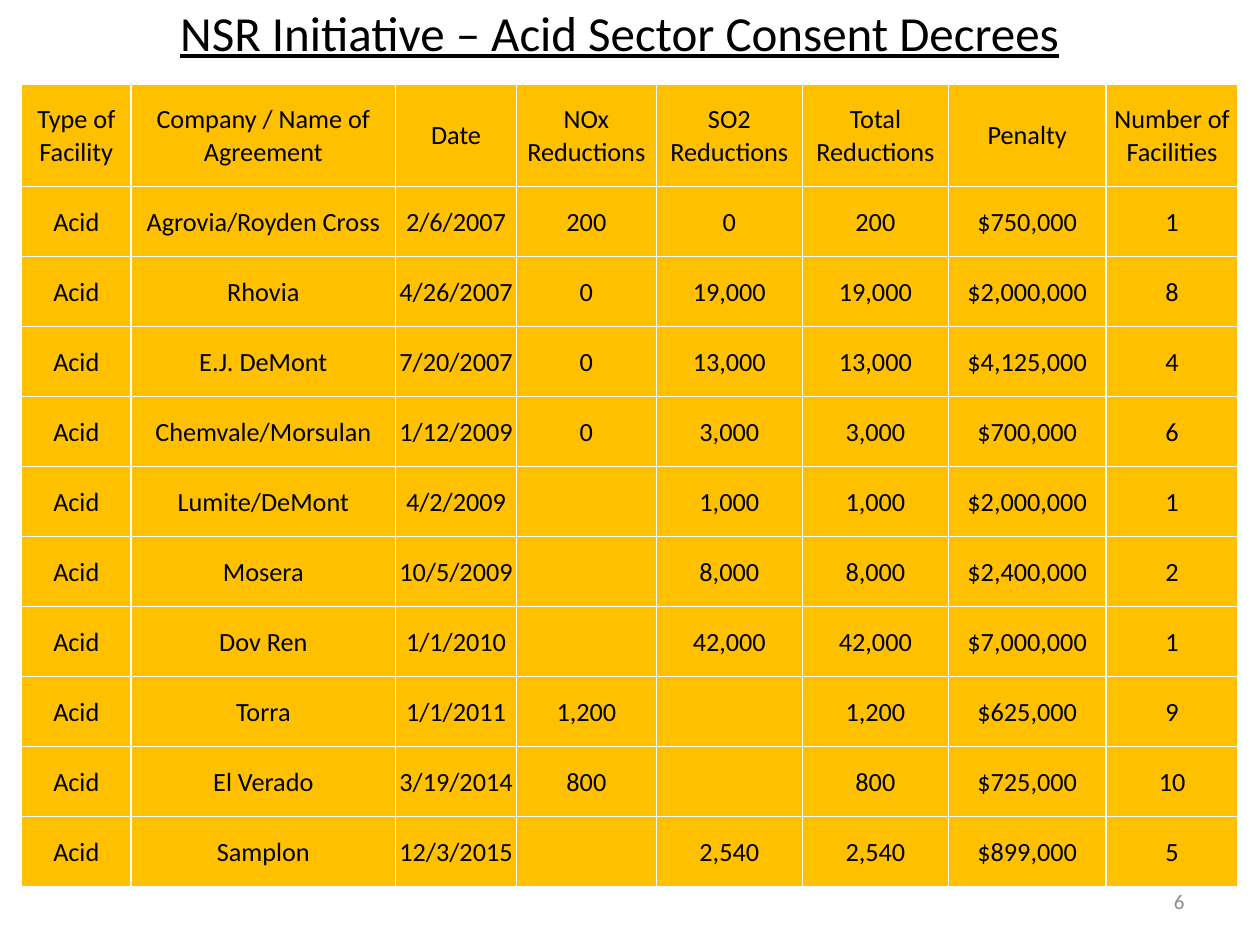
"""Builds the NSR Initiative slide with its table of acid sector consent decrees."""
import pptx
import pptx.dml.color
import pptx.enum.text
import pptx.oxml
import pptx.oxml.ns
import pptx.util

Pt = pptx.util.Pt
ALIGN = pptx.enum.text.PP_ALIGN
MIDDLE = pptx.enum.text.MSO_ANCHOR.MIDDLE

TITLE = "NSR Initiative – Acid Sector Consent Decrees"
PAGE_NUMBER = "6"
FACILITY_TYPE = "Acid"
HEADINGS = [
    "Type of Facility", "Company / Name of Agreement", "Date", "NOx Reductions",
    "SO2 Reductions", "Total Reductions", "Penalty", "Number of Facilities",
]
DECREES = [
    ("Agrovia/Royden Cross", "2/6/2007", "200", "0", "200", "$750,000", "1"),
    ("Rhovia", "4/26/2007", "0", "19,000", "19,000", "$2,000,000", "8"),
    ("E.J. DeMont", "7/20/2007", "0", "13,000", "13,000", "$4,125,000", "4"),
    ("Chemvale/Morsulan", "1/12/2009", "0", "3,000", "3,000", "$700,000", "6"),
    ("Lumite/DeMont", "4/2/2009", "", "1,000", "1,000", "$2,000,000", "1"),
    ("Mosera", "10/5/2009", "", "8,000", "8,000", "$2,400,000", "2"),
    ("Dov Ren", "1/1/2010", "", "42,000", "42,000", "$7,000,000", "1"),
    ("Torra", "1/1/2011", "1,200", "", "1,200", "$625,000", "9"),
    ("El Verado", "3/19/2014", "800", "", "800", "$725,000", "10"),
    ("Samplon", "12/3/2015", "", "2,540", "2,540", "$899,000", "5"),
]

COLORS = {"text": "000000", "cell": "FFC000", "border": "FFFFFF", "page": "8C8C8C"}
FONT = "Calibri"
COLUMN_WIDTHS = [62.6, 151.2, 69.1, 79.9, 83.5, 83.5, 90, 75.6]
HEADING_HEIGHT, DECREE_HEIGHT = 58.4, 40
TABLE_LEFT, TABLE_TOP = 12.3, 48.2


def rgb(name):
    return pptx.dml.color.RGBColor.from_string(COLORS[name])


def write(frame, text, size=15, color="text", align=ALIGN.CENTER, underline=None):
    frame.word_wrap = True
    paragraph = frame.paragraphs[0]
    paragraph.alignment = align
    paragraph.font.size = Pt(size)
    if text:
        run = paragraph.add_run()
        run.text = text
        run.font.name = FONT
        run.font.size = Pt(size)
        run.font.color.rgb = rgb(color)
        run.font.underline = underline


def add_label(slide, text, left, top, width, height, **text_format):
    label = slide.shapes.add_textbox(Pt(left), Pt(top), Pt(width), Pt(height))
    label.text_frame.vertical_anchor = MIDDLE
    write(label.text_frame, text, **text_format)


def style_cell(cell):
    cell.vertical_anchor = MIDDLE
    cell.margin_left = cell.margin_right = cell.margin_top = Pt(0.7)
    cell.margin_bottom = 0
    properties = cell._tc.get_or_add_tcPr()
    for side in ("lnL", "lnR", "lnT", "lnB"):
        properties.append(pptx.oxml.parse_xml(
            f'<a:{side} {pptx.oxml.ns.nsdecls("a")} w="{Pt(1)}"><a:solidFill>'
            f'<a:srgbClr val="{COLORS["border"]}"/></a:solidFill></a:{side}>'))
    cell.fill.solid()
    cell.fill.fore_color.rgb = rgb("cell")


def add_decree_table(slide):
    rows = [HEADINGS] + [(FACILITY_TYPE, *decree) for decree in DECREES]
    heights = [HEADING_HEIGHT] + [DECREE_HEIGHT] * len(DECREES)
    table = slide.shapes.add_table(
        len(rows), len(HEADINGS), Pt(TABLE_LEFT), Pt(TABLE_TOP),
        Pt(sum(COLUMN_WIDTHS)), Pt(sum(heights))).table
    for column, width in zip(table.columns, COLUMN_WIDTHS):
        column.width = Pt(width)
    for row, height, values in zip(table.rows, heights, rows):
        row.height = Pt(height)
        for cell, value in zip(row.cells, values):
            style_cell(cell)
            write(cell.text_frame, value)


def main():
    deck = pptx.Presentation()
    deck.slide_width, deck.slide_height = Pt(720), Pt(540)
    slide = deck.slides.add_slide(deck.slide_layouts[6])
    add_label(slide, TITLE, 30, 0, 648, 36, size=28, underline=True)
    add_decree_table(slide)
    add_label(slide, PAGE_NUMBER, 516, 500.5, 168, 28.8,
              size=12, color="page", align=ALIGN.RIGHT)
    deck.save("out.pptx")


if __name__ == "__main__":
    main()
